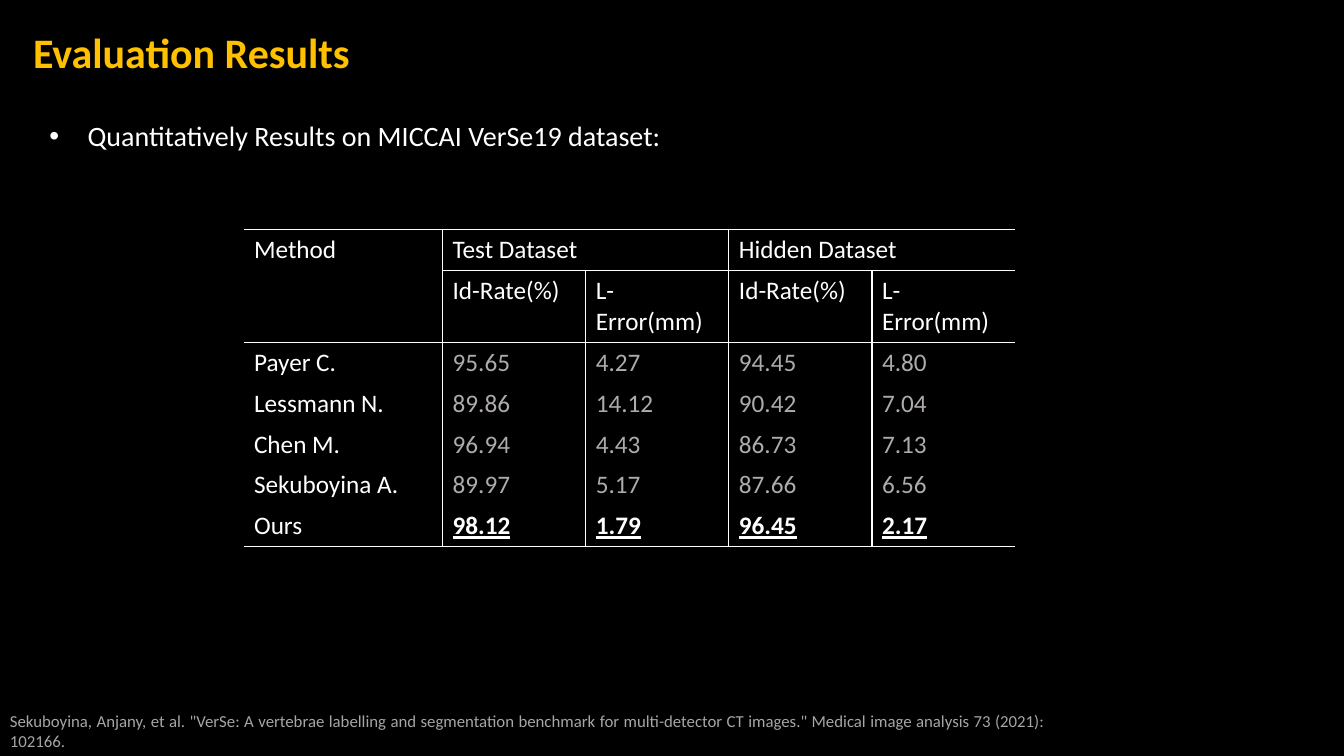
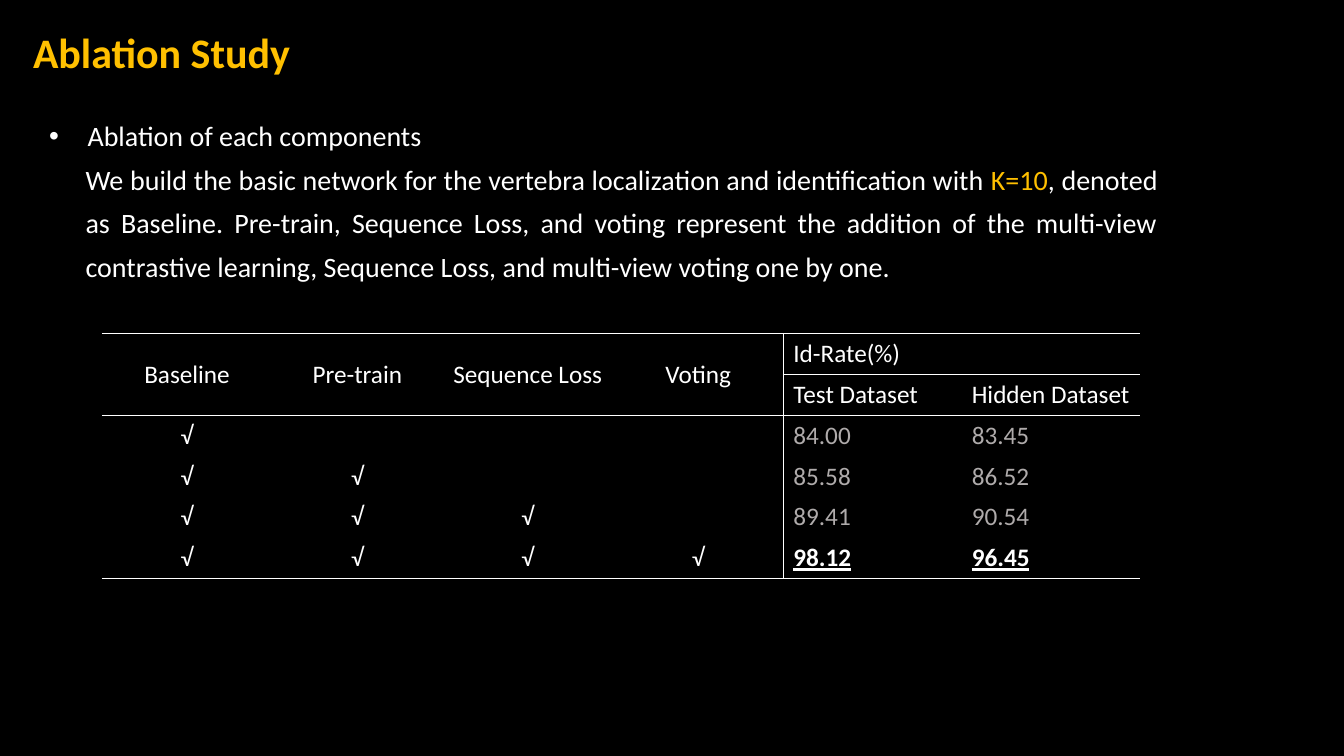
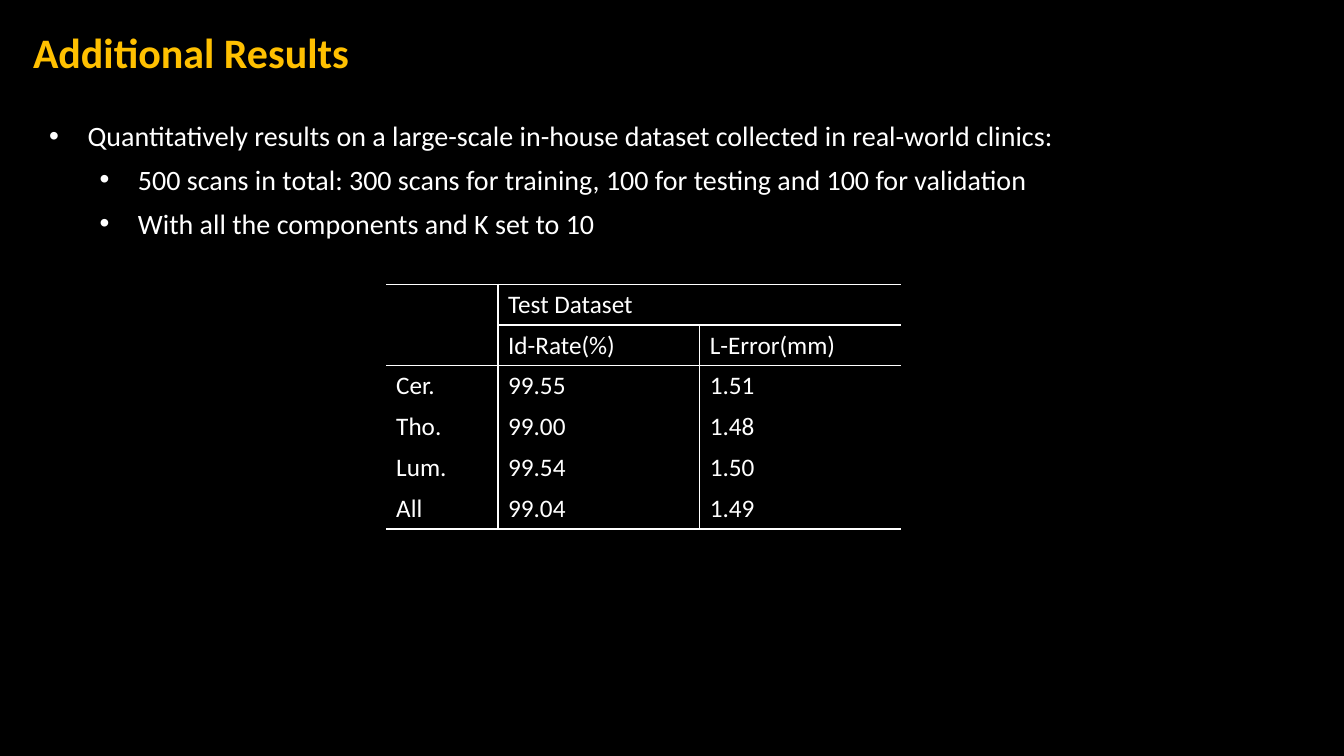
from dataclasses import dataclass
from typing import Any

from lxml.etree import SubElement
from pptx import Presentation
from pptx.dml.color import RGBColor
from pptx.enum.text import MSO_ANCHOR, MSO_AUTO_SIZE, PP_ALIGN
from pptx.oxml.ns import qn
from pptx.slide import Slide
from pptx.util import Inches, Pt

BLACK = RGBColor(0x00, 0x00, 0x00)
WHITE = RGBColor(0xFF, 0xFF, 0xFF)
GOLD = RGBColor(0xFF, 0xC0, 0x00)
MUTED = RGBColor(0xAF, 0xAB, 0xAB)
CITATION_GRAY = RGBColor(0xA6, 0xA6, 0xA6)

FONT = "Calibri"
TITLE_FORMAT = {"name": FONT, "size": Pt(30), "bold": True}
BODY_FORMAT = {"name": FONT, "size": Pt(20)}
CITATION_FORMAT = {"name": FONT, "size": Pt(12)}
CELL_FORMAT = {"name": FONT, "size": Pt(18)}
BEST_FORMAT = {**CELL_FORMAT, "bold": True, "underline": True}

BODY_LAYOUT = {"alignment": PP_ALIGN.JUSTIFY, "line_spacing": 1.3}
HEADER_ROWS = 2
CHECK = "√"


@dataclass(frozen=True)
class Run:
    text: str
    color: RGBColor = WHITE


@dataclass(frozen=True)
class Line:
    runs: tuple[Run, ...]
    level: int = 0
    bullet: bool = False


@dataclass(frozen=True)
class TextBlock:
    left: float
    top: float
    width: float
    height: float
    lines: tuple[Line, ...]
    font_format: dict[str, Any]
    layout: dict[str, Any]


@dataclass(frozen=True)
class ResultTable:
    left: float
    top: float
    height: float
    column_widths: tuple[float, ...]
    rows: tuple[tuple[str, ...], ...]
    label_columns: int
    dividers: dict[int, int]
    group_starts: tuple[int, ...] = ()
    centered_labels: bool = False
    highlight_last: bool = False

    def has_horizontal(self, boundary: int, column: int) -> bool:
        if boundary == 1:
            return column >= self.label_columns
        return boundary in (0, HEADER_ROWS, len(self.rows))

    def has_vertical(self, boundary: int, row: int) -> bool:
        return row >= self.dividers.get(boundary, len(self.rows))


@dataclass(frozen=True)
class ResultSlide:
    title: str
    blocks: tuple[TextBlock, ...]
    table: ResultTable


def apply_format(target: Any, values: dict[str, Any]) -> None:
    for name, value in values.items():
        setattr(target, name, value)


def add_run(paragraph: Any, run: Run, font_format: dict[str, Any]) -> None:
    text_run = paragraph.add_run()
    text_run.text = run.text
    apply_format(text_run.font, font_format)
    text_run.font.color.rgb = run.color


def add_bullet(paragraph: Any, level: int) -> None:
    properties = paragraph._p.get_or_add_pPr()
    properties.set("marL", str(Inches(0.38 + 0.5 * level)))
    properties.set("indent", str(Inches(-0.38)))
    SubElement(properties, qn("a:buFont"), typeface="Arial")
    SubElement(properties, qn("a:buChar"), char="•")


def add_text(slide: Slide, block: TextBlock) -> None:
    box = slide.shapes.add_textbox(
        Inches(block.left), Inches(block.top), Inches(block.width), Inches(block.height)
    )
    frame = box.text_frame
    frame.word_wrap = True
    frame.auto_size = MSO_AUTO_SIZE.SHAPE_TO_FIT_TEXT
    for index, line in enumerate(block.lines):
        paragraph = frame.add_paragraph() if index else frame.paragraphs[0]
        if line.bullet:
            add_bullet(paragraph, line.level)
        apply_format(paragraph, {**block.layout, "level": line.level})
        for run in line.runs:
            add_run(paragraph, run, block.font_format)


def set_borders(cell: Any, sides: dict[str, bool]) -> None:
    properties = cell._tc.get_or_add_tcPr()
    for side, visible in sides.items():
        border = SubElement(properties, qn(f"a:ln{side}"), w=str(Pt(1)))
        if visible:
            fill = SubElement(border, qn("a:solidFill"))
            SubElement(fill, qn("a:srgbClr"), val=str(WHITE))
        else:
            SubElement(border, qn("a:noFill"))
    cell.fill.solid()
    cell.fill.fore_color.rgb = BLACK


def fill_cell(cell: Any, spec: ResultTable, row: int, column: int) -> None:
    is_label = column < spec.label_columns
    is_value = row >= HEADER_ROWS and not is_label
    is_last = row == len(spec.rows) - 1
    paragraph = cell.text_frame.paragraphs[0]
    if is_label and spec.centered_labels:
        paragraph.alignment = PP_ALIGN.CENTER
        if row < HEADER_ROWS:
            cell.vertical_anchor = MSO_ANCHOR.MIDDLE
    text = spec.rows[row][column]
    if text:
        emphasized = spec.highlight_last and is_value
        color = MUTED if emphasized and not is_last else WHITE
        add_run(paragraph, Run(text, color), BEST_FORMAT if emphasized and is_last else CELL_FORMAT)


def add_result_table(slide: Slide, spec: ResultTable) -> None:
    table = slide.shapes.add_table(
        len(spec.rows), len(spec.column_widths), Inches(spec.left), Inches(spec.top),
        Inches(sum(spec.column_widths)), Inches(spec.height),
    ).table
    apply_format(table, {"first_row": False, "horz_banding": False})
    for column, width in zip(table.columns, spec.column_widths):
        column.width = Inches(width)
    for column in range(spec.label_columns):
        table.cell(0, column).merge(table.cell(HEADER_ROWS - 1, column))
    for column in spec.group_starts:
        table.cell(0, column).merge(table.cell(0, column + 1))
    for row in range(len(spec.rows)):
        for column in range(len(spec.column_widths)):
            cell = table.cell(row, column)
            bottom = row + (cell.span_height if cell.is_merge_origin else 1)
            right = column + (cell.span_width if cell.is_merge_origin else 1)
            set_borders(cell, {
                "L": spec.has_vertical(column, row),
                "R": spec.has_vertical(right, row),
                "T": spec.has_horizontal(row, column),
                "B": spec.has_horizontal(bottom, column),
            })
            fill_cell(cell, spec, row, column)


def title_block(title: str) -> TextBlock:
    return TextBlock(0.23, 0.21, 8.07, 0.61, (Line((Run(title, GOLD),)),), TITLE_FORMAT, {})


def bullet_block(width: float, height: float, *entries: tuple[str, int]) -> TextBlock:
    lines = tuple(Line((Run(text),), level, True) for text, level in entries)
    return TextBlock(0.39, 1.03, width, height, lines, BODY_FORMAT, BODY_LAYOUT)


EVALUATION = ResultSlide(
    "Evaluation Results",
    (
        bullet_block(6.68, 0.5, ("Quantitatively Results on MICCAI VerSe19 dataset:", 0)),
        TextBlock(
            0, 7, 10.47, 0.5,
            (Line((Run(
                'Sekuboyina, Anjany, et al. "VerSe: A vertebrae labelling and segmentation '
                'benchmark for multi-detector CT images." Medical image analysis 73 (2021): 102166.',
                CITATION_GRAY,
            ),)),),
            CITATION_FORMAT, {"alignment": PP_ALIGN.JUSTIFY},
        ),
    ),
    ResultTable(
        2.42, 2.28, 2.84, (1.97,) + (1.42,) * 4,
        (
            ("Method", "Test Dataset", "", "Hidden Dataset", ""),
            ("",) + ("Id-Rate(%)", "L-Error(mm)") * 2,
            ("Payer C.", "95.65", "4.27", "94.45", "4.80"),
            ("Lessmann N.", "89.86", "14.12", "90.42", "7.04"),
            ("Chen M.", "96.94", "4.43", "86.73", "7.13"),
            ("Sekuboyina A.", "89.97", "5.17", "87.66", "6.56"),
            ("Ours", "98.12", "1.79", "96.45", "2.17"),
        ),
        label_columns=1, dividers={1: 0, 2: 1, 3: 0, 4: 1}, group_starts=(1, 3),
        highlight_last=True,
    ),
)

ABLATION = ResultSlide(
    "Ablation Study",
    (
        bullet_block(5.27, 0.5, ("Ablation of each components", 0)),
        TextBlock(
            0.75, 1.46, 10.83, 1.38,
            (Line((
                Run("We build the basic network for the vertebra localization and identification with "),
                Run("K=10", GOLD),
                Run(
                    ", denoted as Baseline. Pre-train, Sequence Loss, and voting represent the "
                    "addition of the multi-view contrastive learning, Sequence Loss, and "
                    "multi-view voting one by one."
                ),
            )),),
            BODY_FORMAT, BODY_LAYOUT,
        ),
    ),
    ResultTable(
        1.01, 3.31, 2.43, (1.69,) * 4 + (1.77,) * 2,
        (
            ("Baseline", "Pre-train", "Sequence Loss", "Voting", "Id-Rate(%)", ""),
            ("", "", "", "", "Test Dataset", "Hidden Dataset"),
            (CHECK, "", "", "", "84.00", "83.45"),
            (CHECK, CHECK, "", "", "85.58", "86.52"),
            (CHECK, CHECK, CHECK, "", "89.41", "90.54"),
            (CHECK, CHECK, CHECK, CHECK, "98.12", "96.45"),
        ),
        label_columns=4, dividers={4: 0}, centered_labels=True, highlight_last=True,
    ),
)

ADDITIONAL = ResultSlide(
    "Additional Results",
    (
        bullet_block(
            12.14, 1.38,
            ("Quantitatively results on a large-scale in-house dataset collected in real-world clinics:", 0),
            ("500 scans in total: 300 scans for training, 100 for testing and 100 for validation", 1),
            ("With all the components and K set to 10", 1),
        ),
    ),
    ResultTable(
        3.83, 2.82, 2.43, (1.11, 2, 2),
        (
            ("", "Test Dataset", ""),
            ("", "Id-Rate(%)", "L-Error(mm)"),
            ("Cer.", "99.55", "1.51"),
            ("Tho.", "99.00", "1.48"),
            ("Lum.", "99.54", "1.50"),
            ("All", "99.04", "1.49"),
        ),
        label_columns=1, dividers={1: 0, 2: 1}, group_starts=(1,),
    ),
)


def main() -> None:
    presentation = Presentation()
    apply_format(presentation, {"slide_width": Inches(13.33), "slide_height": Inches(7.5)})
    background = presentation.slide_master.background.fill
    background.solid()
    background.fore_color.rgb = BLACK
    blank_layout = presentation.slide_layouts[6]
    for content in (EVALUATION, ABLATION, ADDITIONAL):
        slide = presentation.slides.add_slide(blank_layout)
        add_result_table(slide, content.table)
        for block in (*content.blocks, title_block(content.title)):
            add_text(slide, block)
    presentation.save("out.pptx")


if __name__ == "__main__":
    main()
